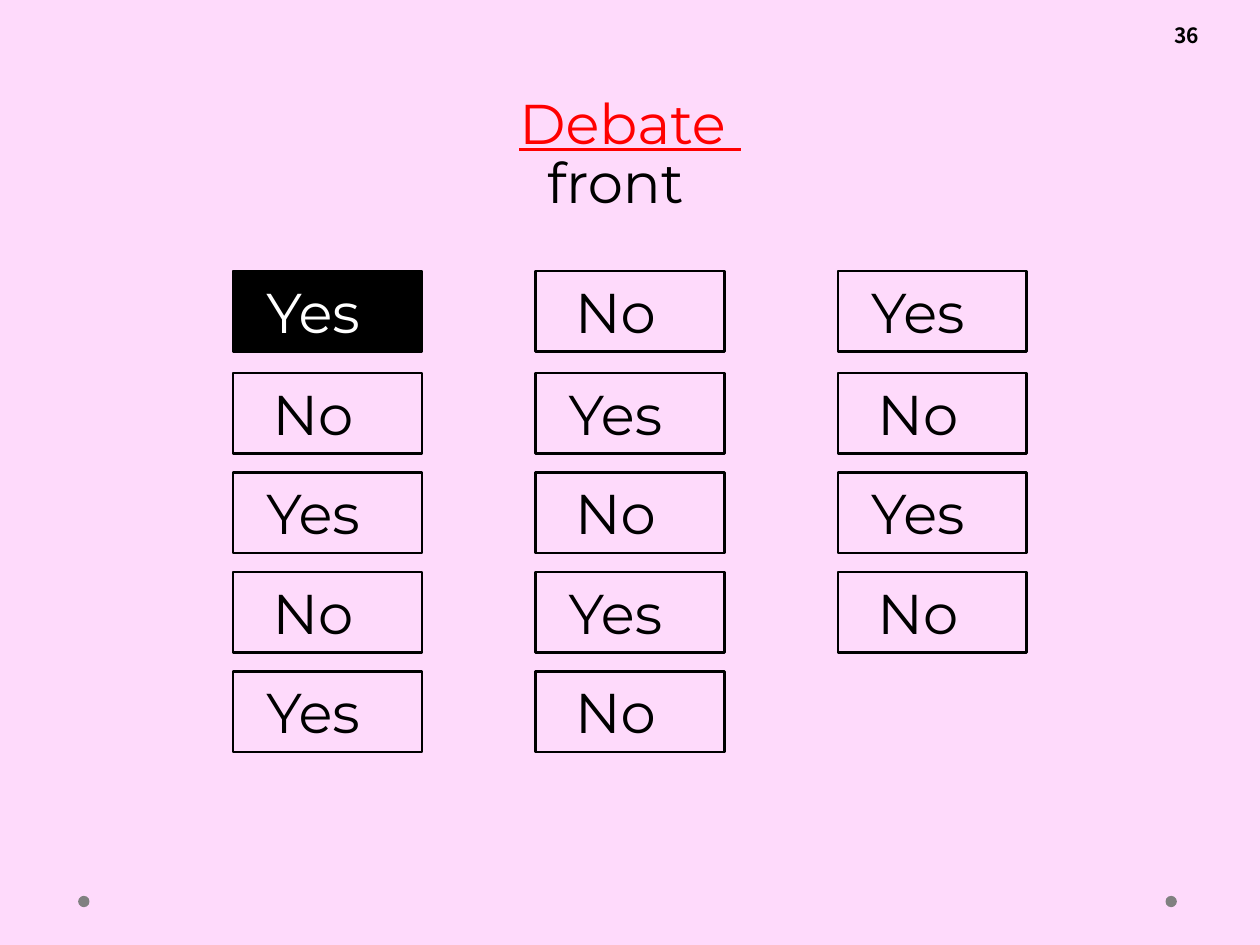
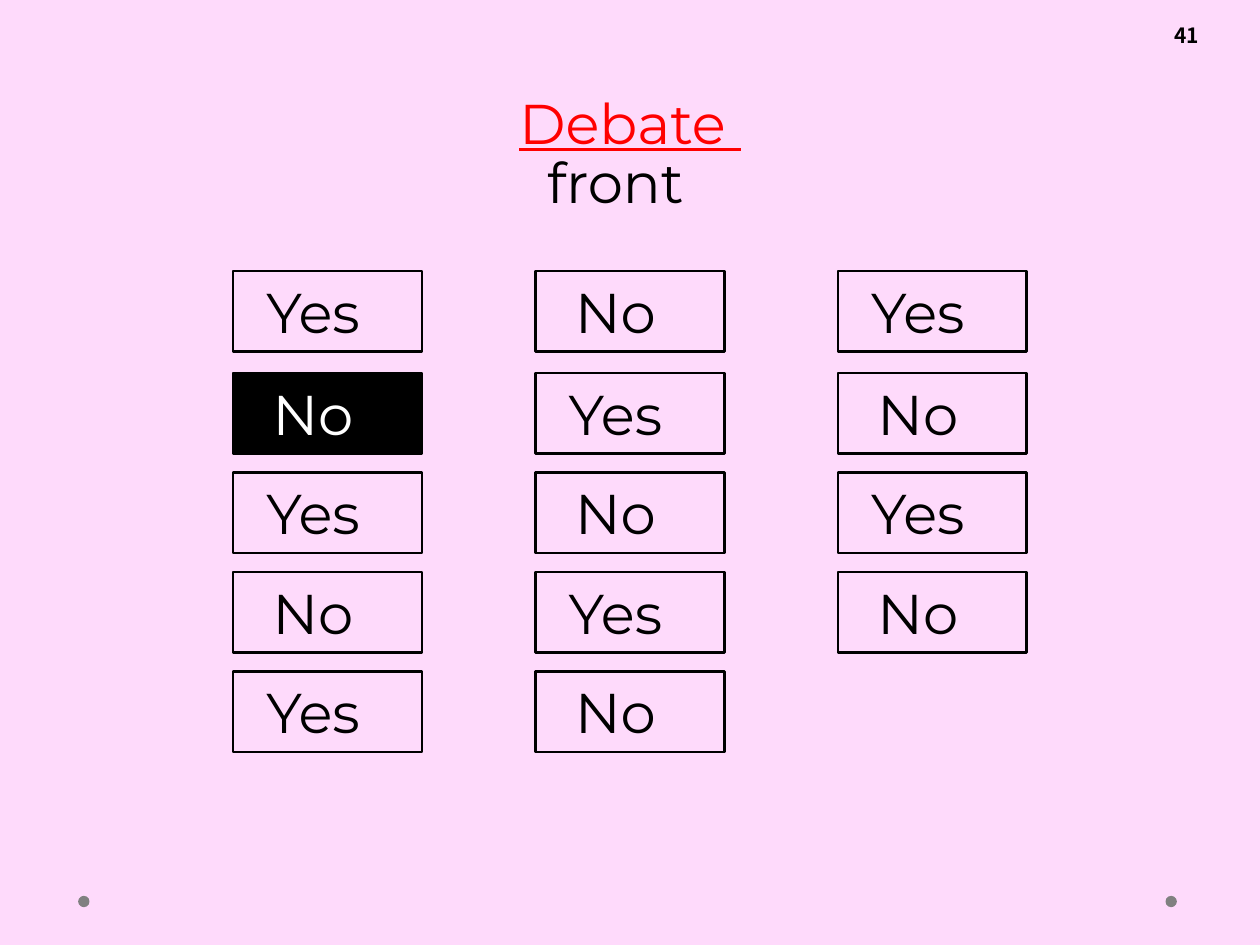
from dataclasses import dataclass

from pptx import Presentation
from pptx.dml.color import RGBColor
from pptx.enum import shapes, text
from pptx.util import Inches, Pt

COLOURS = {
    "background": "FEDAFB",
    "ink": "000000",
    "paper": "FFFFFF",
    "accent": "FF0000",
    "dot": "808080",
}
BODY_FONT = "Montserrat"
NUMBER_FONT = "Noto Sans CJK JP"
SLIDE_WIDTH, SLIDE_HEIGHT = 10, 7.5
COLUMN_LEFT, COLUMN_PITCH = 1.85, 2.4
FIRST_ROW_TOP, SECOND_ROW_TOP, ROW_PITCH = 2.15, 2.96, 0.79
CARD_WIDTH, CARD_HEIGHT = 1.5, 0.64
ROW_COUNT, SPEECH_COUNT = 5, 14
ANSWERS = ("Yes", "No")
OFFSET_MARGINS = (0, 0.23)
DOT_SIZE, DOT_TOP, DOT_LEFTS = 0.09, 7.11, (9.25, 0.62)


@dataclass(frozen=True)
class Area:
    left: float
    top: float
    width: float
    height: float

    def lengths(self) -> tuple:
        return tuple(Inches(n) for n in (self.left, self.top, self.width, self.height))


@dataclass(frozen=True)
class DebatePage:
    number: int
    active_speech: int


TITLE_AREA = Area(0.55, 0.65, SLIDE_WIDTH - 2 * 0.55, CARD_HEIGHT)
FRONT_AREA = Area(COLUMN_LEFT + COLUMN_PITCH, 1.12, CARD_WIDTH, CARD_HEIGHT)
NUMBER_AREA = Area(9.22, 0.13, 0.55, 0.3)
PAGES = (DebatePage(36, 0), DebatePage(41, 1))


def colour(name: str) -> RGBColor:
    return RGBColor.from_string(COLOURS[name])


def write(box, words: str, *, size: float = 32, font: str = BODY_FONT,
          ink: str = "ink", bold: bool = False, underline: bool = False,
          align=text.PP_ALIGN.CENTER, anchor=text.MSO_ANCHOR.TOP,
          margins: tuple = (0.1, 0.1)) -> None:
    frame = box.text_frame
    frame.word_wrap = True
    frame.auto_size = text.MSO_AUTO_SIZE.NONE
    frame.vertical_anchor = anchor
    frame.margin_left, frame.margin_right = (Inches(n) for n in margins)
    frame.margin_top = frame.margin_bottom = Inches(0.05)
    para = frame.paragraphs[0]
    para.alignment = align
    span = para.add_run()
    span.text = words
    span.font.size = Pt(size)
    span.font.name = font
    span.font.bold = bold
    span.font.underline = underline
    span.font.color.rgb = colour(ink)


def add_title(page, words: str) -> None:
    title = page.shapes.title
    title.left, title.top, title.width, title.height = TITLE_AREA.lengths()
    write(title, words, ink="accent", underline=True)


def add_label(page, area: Area, words: str, **style) -> None:
    write(page.shapes.add_textbox(*area.lengths()), words, **style)


def add_dot(page, left: float) -> None:
    area = Area(left, DOT_TOP, DOT_SIZE, DOT_SIZE)
    dot = page.shapes.add_shape(shapes.MSO_SHAPE.OVAL, *area.lengths())
    dot.shadow.inherit = False
    dot.fill.solid()
    dot.fill.fore_color.rgb = colour("dot")
    dot.line.fill.background()


def speech_area(index: int) -> Area:
    column, row = divmod(index, ROW_COUNT)
    top = SECOND_ROW_TOP + (row - 1) * ROW_PITCH if row else FIRST_ROW_TOP
    return Area(COLUMN_LEFT + column * COLUMN_PITCH, top, CARD_WIDTH, CARD_HEIGHT)


def add_speech(page, index: int, active: bool) -> None:
    card = page.shapes.add_shape(
        shapes.MSO_SHAPE.RECTANGLE, *speech_area(index).lengths())
    card.shadow.inherit = False
    card.line.color.rgb = colour("ink")
    card.line.width = Pt(1.5)
    if active:
        card.fill.solid()
        card.fill.fore_color.rgb = colour("ink")
    else:
        card.fill.background()
    write(card, ANSWERS[index % len(ANSWERS)],
          ink="paper" if active else "ink", margins=OFFSET_MARGINS)


def add_debate_page(deck, debate: DebatePage) -> None:
    page = deck.slides.add_slide(deck.slide_layouts.get_by_name("Title Only"))
    for left in DOT_LEFTS:
        add_dot(page, left)
    add_label(page, NUMBER_AREA, str(debate.number), size=12, font=NUMBER_FONT,
              bold=True, align=text.PP_ALIGN.LEFT, anchor=text.MSO_ANCHOR.MIDDLE)
    add_label(page, FRONT_AREA, "front", margins=OFFSET_MARGINS)
    add_title(page, "Debate ")
    for index in range(SPEECH_COUNT):
        add_speech(page, index, index == debate.active_speech)


def main() -> None:
    deck = Presentation()
    deck.slide_width, deck.slide_height = Inches(SLIDE_WIDTH), Inches(SLIDE_HEIGHT)
    backdrop = deck.slide_master.background.fill
    backdrop.solid()
    backdrop.fore_color.rgb = colour("background")
    for debate in PAGES:
        add_debate_page(deck, debate)
    deck.save("out.pptx")


if __name__ == "__main__":
    main()
